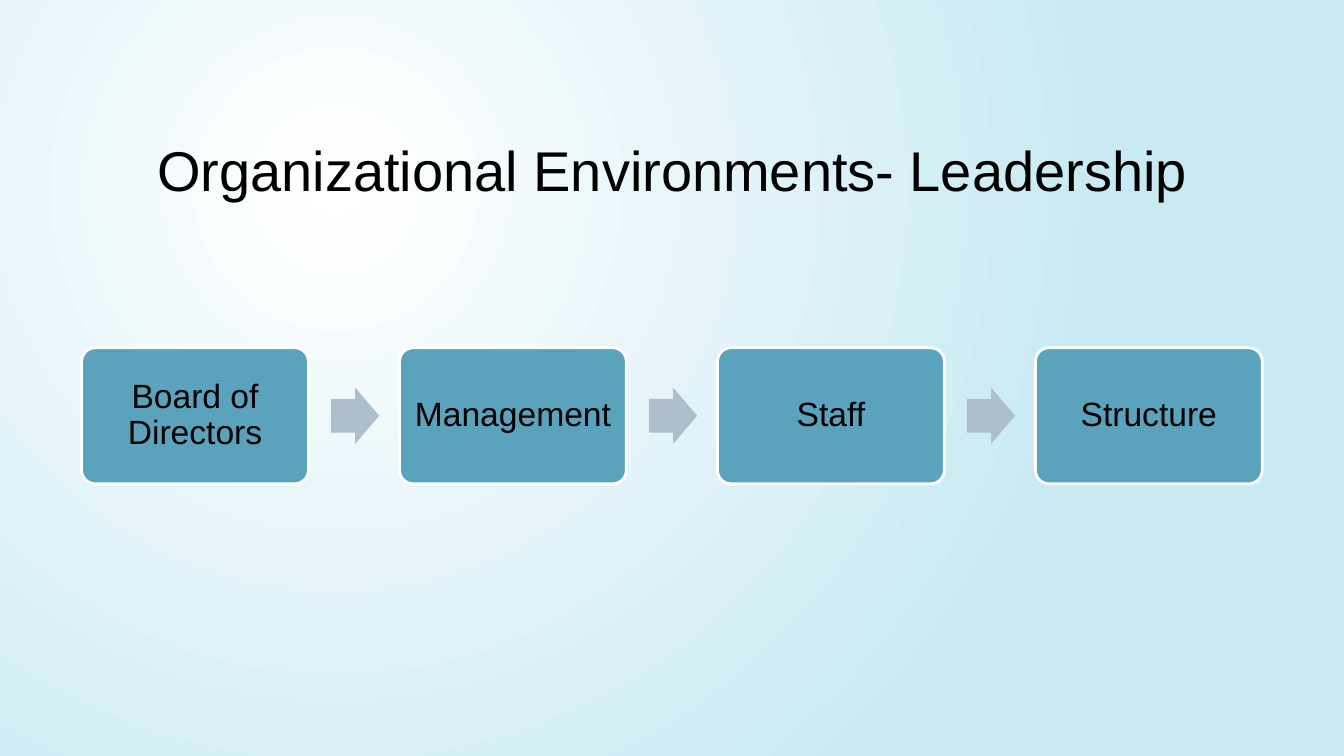
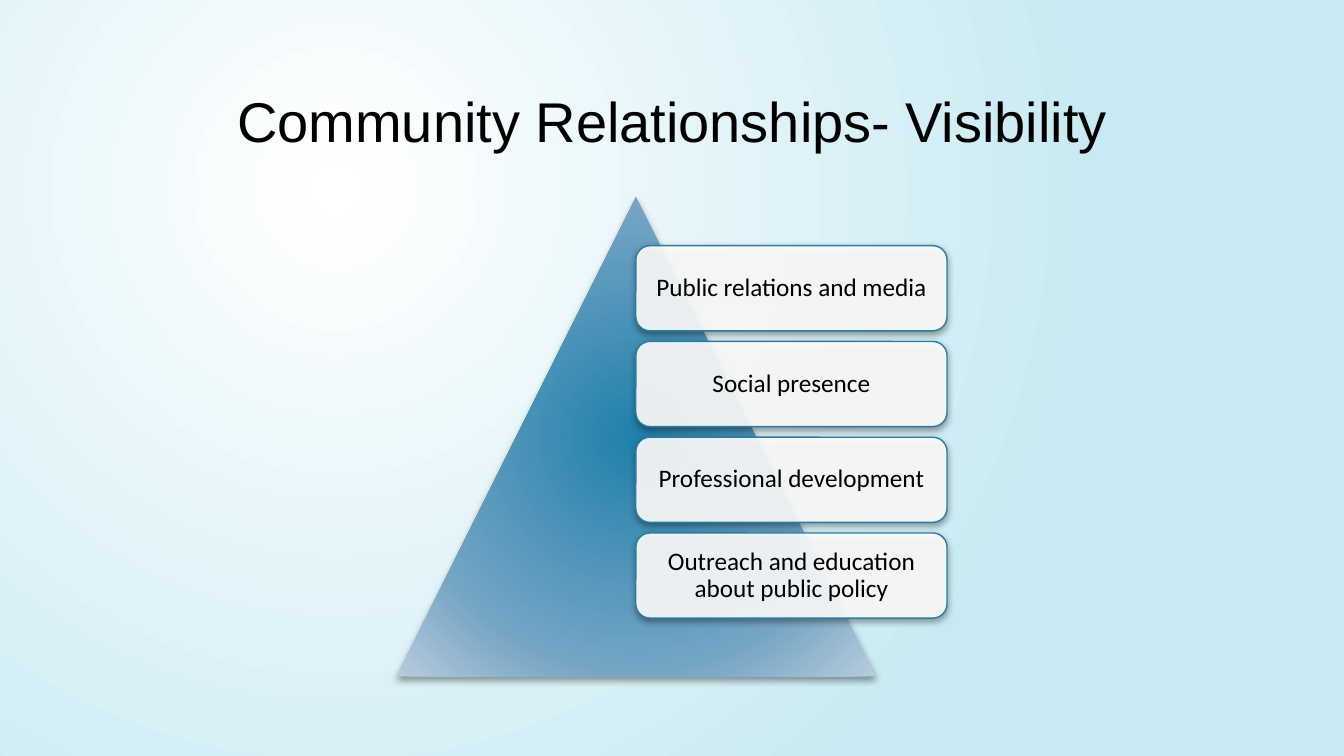
"""Build two slides on leadership structure and community visibility."""
import dataclasses

import lxml.etree
import pptx
import pptx.dml.color
import pptx.enum.shapes
import pptx.enum.text
import pptx.oxml.ns
import pptx.util

Pt = pptx.util.Pt
Shape = pptx.enum.shapes.MSO_SHAPE
Anchor = pptx.enum.text.MSO_ANCHOR

LEADERSHIP = {
    "title": "Organizational Environments- Leadership",
    "title_box": (57.6, 72, 844.8, 76.3),
    "steps": ["Board of Directors", "Management", "Staff", "Structure"],
}
VISIBILITY = {
    "title": "Community Relationships- Visibility",
    "title_box": (57.6, 30.2, 844.8, 82.8),
    "cards": [
        "Public relations and media",
        "Social presence",
        "Professional development",
        "Outreach and education about public policy",
    ],
}


@dataclasses.dataclass(frozen=True)
class Theme:
    text: str = "000000"
    white: str = "FFFFFF"
    step: str = "5BA2BC"
    arrow: str = "ADBFCD"
    card_line: str = "2C7C9F"
    background: tuple = ((0, "FFFFFF"), (100, "C9EAF3"))
    pyramid: tuple = ((0, "2080AB"), (69, "75A5C5"), (100, "B8CCDC"))
    title_font: str = "Arial"
    card_font: str = "Calibri"
    title_size: int = 40
    step_size: int = 24
    card_size: int = 18


THEME = Theme()


def rgb(value):
    return pptx.dml.color.RGBColor.from_string(value)


def add_xml(parent, tag, **attributes):
    values = {name: str(value) for name, value in attributes.items()}
    return lxml.etree.SubElement(parent, pptx.oxml.ns.qn(tag), values)


def set_radial_fill(fill, properties, stops, left_top, right_bottom):
    fill.solid()
    solid = properties.find(pptx.oxml.ns.qn("a:solidFill"))
    gradient = lxml.etree.Element(pptx.oxml.ns.qn("a:gradFill"), rotWithShape="1")
    stop_list = add_xml(gradient, "a:gsLst")
    for position, color in stops:
        stop = add_xml(stop_list, "a:gs", pos=position * 1000)
        add_xml(stop, "a:srgbClr", val=color)
    circle = add_xml(gradient, "a:path", path="circle")
    start, end = left_top * 1000, right_bottom * 1000
    add_xml(circle, "a:fillToRect", l=start, t=start, r=end, b=end)
    properties.replace(solid, gradient)


def add_shadow(shape):
    effects = shape.element.spPr.find(pptx.oxml.ns.qn("a:effectLst"))
    shadow = add_xml(effects, "a:outerShdw", blurRad=Pt(5), dist=Pt(2),
                     dir=90 * 60000, algn="ctr", rotWithShape=0)
    color = add_xml(shadow, "a:srgbClr", val=THEME.text)
    add_xml(color, "a:alpha", val=40000)


def write(shape, text, font, size, anchor=Anchor.MIDDLE, margin=None, spacing=None):
    frame = shape.text_frame
    frame.word_wrap = True
    frame.vertical_anchor = anchor
    if margin is not None:
        frame.margin_left = frame.margin_right = Pt(margin)
        frame.margin_top = frame.margin_bottom = Pt(margin)
    paragraph = frame.paragraphs[0]
    paragraph.alignment = pptx.enum.text.PP_ALIGN.CENTER
    paragraph.line_spacing = spacing
    run = paragraph.add_run()
    run.text = text
    run.font.name = font
    run.font.size = Pt(size)
    run.font.color.rgb = rgb(THEME.text)


def add_shape(slide, kind, box, fill, line=None, line_width=1, adjustments=()):
    shape = slide.shapes.add_shape(kind, *map(Pt, box))
    shape.fill.solid()
    shape.fill.fore_color.rgb = rgb(fill)
    if line:
        shape.line.color.rgb = rgb(line)
        shape.line.width = Pt(line_width)
    else:
        shape.line.fill.background()
    shape.shadow.inherit = False
    for index, value in enumerate(adjustments):
        shape.adjustments[index] = value
    return shape


def add_titled_slide(presentation, content):
    slide = presentation.slides.add_slide(presentation.slide_layouts[6])
    title = slide.shapes.add_textbox(*map(Pt, content["title_box"]))
    write(title, content["title"], THEME.title_font, THEME.title_size, Anchor.BOTTOM)
    return slide


def build_leadership(presentation):
    slide = add_titled_slide(presentation, LEADERSHIP)
    left, top, width, height, pitch = 58.3, 248.4, 162, 97.2, 227.1
    arrow_width, arrow_height = 34.4, 40.2
    for index, label in enumerate(LEADERSHIP["steps"]):
        x = left + index * pitch
        if index:
            arrow_x = x - pitch + width * 1.1
            arrow_y = top + (height - arrow_height) / 2
            add_shape(slide, Shape.RIGHT_ARROW,
                      (arrow_x, arrow_y, arrow_width, arrow_height),
                      THEME.arrow, adjustments=(0.6, 0.5))
        step = add_shape(slide, Shape.ROUNDED_RECTANGLE, (x, top, width, height),
                         THEME.step, THEME.white, 2, (0.1,))
        write(step, label, THEME.title_font, THEME.step_size, margin=7, spacing=0.9)


def build_visibility(presentation):
    slide = add_titled_slide(presentation, VISIBILITY)
    left, top, side = 283.2, 141.1, 342
    pyramid = add_shape(slide, Shape.ISOSCELES_TRIANGLE, (left, top, side, side),
                        THEME.white)
    set_radial_fill(pyramid.fill, pyramid.element.spPr, THEME.pyramid, 100, 100)
    add_shadow(pyramid)
    card_width, card_height, card_top = side * 0.65, 60.8, 175.5
    for index, label in enumerate(VISIBILITY["cards"]):
        y = card_top + index * card_height * 1.125
        card = add_shape(slide, Shape.ROUNDED_RECTANGLE,
                         (left + side / 2, y, card_width, card_height),
                         THEME.white, THEME.card_line)
        fill_color = card.element.spPr.find(pptx.oxml.ns.qn("a:solidFill"))[0]
        add_xml(fill_color, "a:alpha", val=90000)
        add_shadow(card)
        write(card, label, THEME.card_font, THEME.card_size, margin=5, spacing=0.9)


def main():
    presentation = pptx.Presentation()
    presentation.slide_width, presentation.slide_height = Pt(960), Pt(540)
    master = presentation.slide_master
    fill = master.background.fill
    fill.solid()
    properties = master.element.xpath("./p:cSld/p:bg/p:bgPr")[0]
    set_radial_fill(fill, properties, THEME.background, 50, 100)
    build_leadership(presentation)
    build_visibility(presentation)
    presentation.save("out.pptx")


if __name__ == "__main__":
    main()
